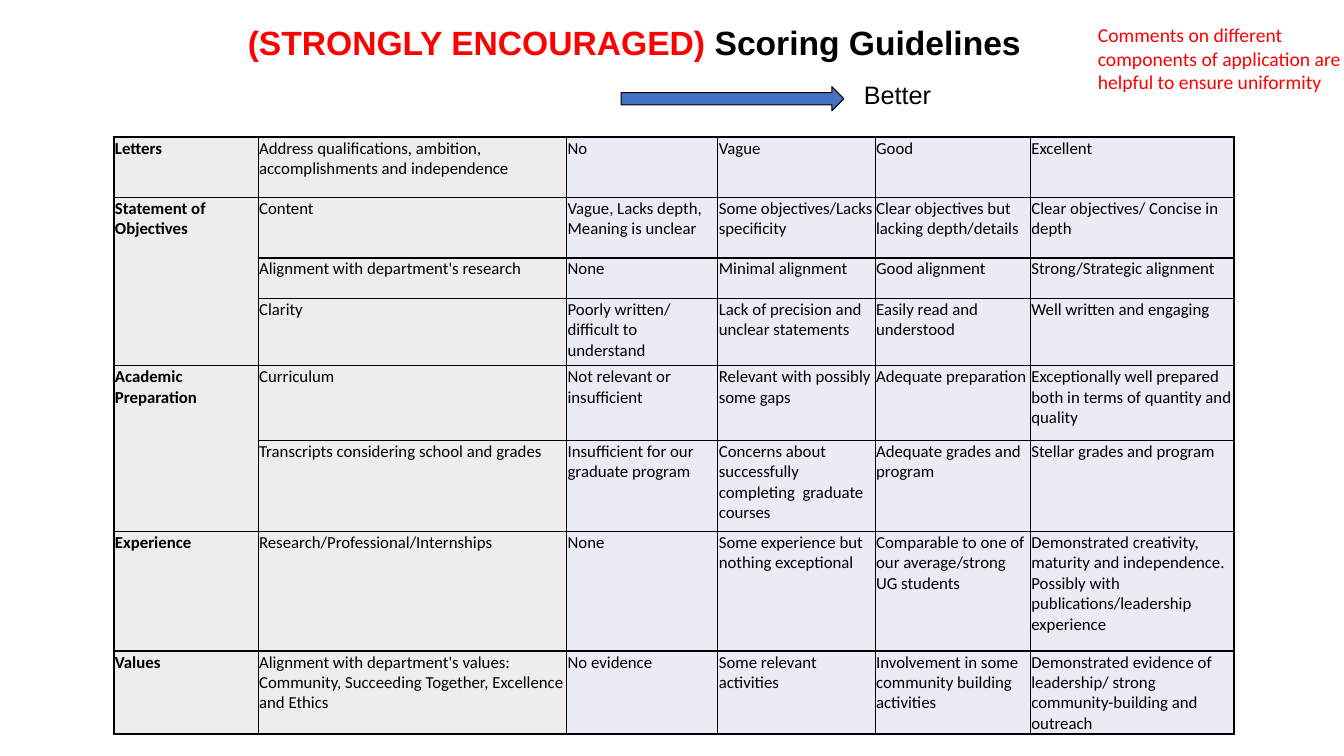
from lxml import etree
from pptx import Presentation
from pptx import util as u
from pptx.dml import color
from pptx.enum import shapes, text
from pptx.oxml import ns

PX = 9144
BLACK, RED, BLUE = "000000", "FF0000", "4472C4"
GREY, PALE = "EDEDED", "E9EBF5"
COLS = [143, 306, 150, 156, 154, 202]
ROWS = [60, 60, 40, 67, 74, 90, 119, 79]
SPANS = [(1, 3), (4, 5)]
GUIDE = [
    ["Letters", "Address qualifications, ambition, accomplishments and independence",
     "No", "Vague", "Good", "Excellent"],
    ["Statement of Objectives", "Content", "Vague, Lacks depth, Meaning is unclear",
     "Some objectives/Lacks specificity", "Clear objectives but lacking depth/details",
     "Clear objectives/ Concise in depth"],
    ["", "Alignment with department's research", "None", "Minimal alignment",
     "Good alignment", "Strong/Strategic alignment"],
    ["", "Clarity", "Poorly written/ difficult to understand",
     "Lack of precision and unclear statements", "Easily read and understood",
     "Well written and engaging"],
    ["Academic Preparation", "Curriculum", "Not relevant or insufficient",
     "Relevant with possibly some gaps", "Adequate preparation",
     "Exceptionally well prepared both in terms of quantity and quality"],
    ["", "Transcripts considering school and grades",
     "Insufficient for our graduate program",
     "Concerns about successfully completing  graduate courses",
     "Adequate grades and program", "Stellar grades and program"],
    ["Experience", "Research/Professional/Internships", "None",
     "Some experience but nothing exceptional",
     "Comparable to one of our average/strong UG students",
     "Demonstrated creativity, maturity and independence. "
     "Possibly with publications/leadership experience"],
    ["Values", "Alignment with department's values: Community, Succeeding Together, "
     "Excellence and Ethics", "No evidence", "Some relevant activities",
     "Involvement in some community building activities",
     "Demonstrated evidence of leadership/ strong community-building and outreach"],
]


def px(*vals):
    return [u.Emu(v * PX) for v in vals]


def paint(fill, tone):
    fill.solid()
    fill.fore_color.rgb = color.RGBColor.from_string(tone)


def add_run(para, words, size, face, tone, bold=False):
    run = para.add_run()
    run.text = words
    font = run.font
    font.size, font.name, font.bold = u.Pt(size), face, bold
    paint(font.fill, tone)


def add_label(slide, box, runs, size, face, bold=False, wrap=True):
    frame = slide.shapes.add_textbox(*px(*box)).text_frame
    frame.word_wrap = wrap
    frame.auto_size = text.MSO_AUTO_SIZE.SHAPE_TO_FIT_TEXT
    for words, tone in runs:
        add_run(frame.paragraphs[0], words, size, face, tone, bold)


def add_arrow(slide, box):
    arrow = slide.shapes.add_shape(shapes.MSO_SHAPE.RIGHT_ARROW, *px(*box))
    arrow.shadow.inherit = False
    paint(arrow.fill, BLUE)
    paint(arrow.line.fill, BLACK)
    arrow.line.width = u.Pt(0.75)


def edge(cell):
    props = cell._tc.get_or_add_tcPr()
    for side in ("lnL", "lnR", "lnT", "lnB"):
        line = etree.SubElement(props, ns.qn("a:" + side), w=str(u.Pt(1)))
        fill = etree.SubElement(line, ns.qn("a:solidFill"))
        etree.SubElement(fill, ns.qn("a:srgbClr"), val=BLACK)


def add_guide(slide, left, top):
    box = px(left, top, sum(COLS), sum(ROWS))
    table = slide.shapes.add_table(len(ROWS), len(COLS), *box).table
    table.first_row = table.horz_banding = False
    for col, width in zip(table.columns, px(*COLS)):
        col.width = width
    for row, height in zip(table.rows, px(*ROWS)):
        row.height = height
    for r, line in enumerate(GUIDE):
        for c, words in enumerate(line):
            cell = table.cell(r, c)
            edge(cell)
            paint(cell.fill, GREY if c < 2 else PALE)
            cell.margin_left, cell.margin_right, cell.margin_top, cell.margin_bottom = px(1, 1, 1, 0)
            if words:
                add_run(cell.text_frame.paragraphs[0], words, 12, "Calibri", BLACK, c == 0)
    for first, last in SPANS:
        table.cell(first, 0).merge(table.cell(last, 0))


def main():
    deck = Presentation()
    deck.slide_width, deck.slide_height = px(1333, 750)
    slide = deck.slides.add_slide(deck.slide_layouts[6])
    add_guide(slide, 113, 136)
    add_label(slide, (236, 17, 794, 50),
              [("(STRONGLY ENCOURAGED) ", RED), ("Scoring Guidelines", BLACK)],
              24, "Arial", bold=True, wrap=False)
    add_arrow(slide, (616, 86, 221, 24))
    add_label(slide, (847, 74, 185, 40), [("Better", BLACK)], 18, "Arial")
    add_label(slide, (1079, 18, 303, 81),
              [("Comments on different components of application are "
                "helpful to ensure uniformity", RED)], 14, "Calibri")
    deck.save("out.pptx")


if __name__ == "__main__":
    main()
